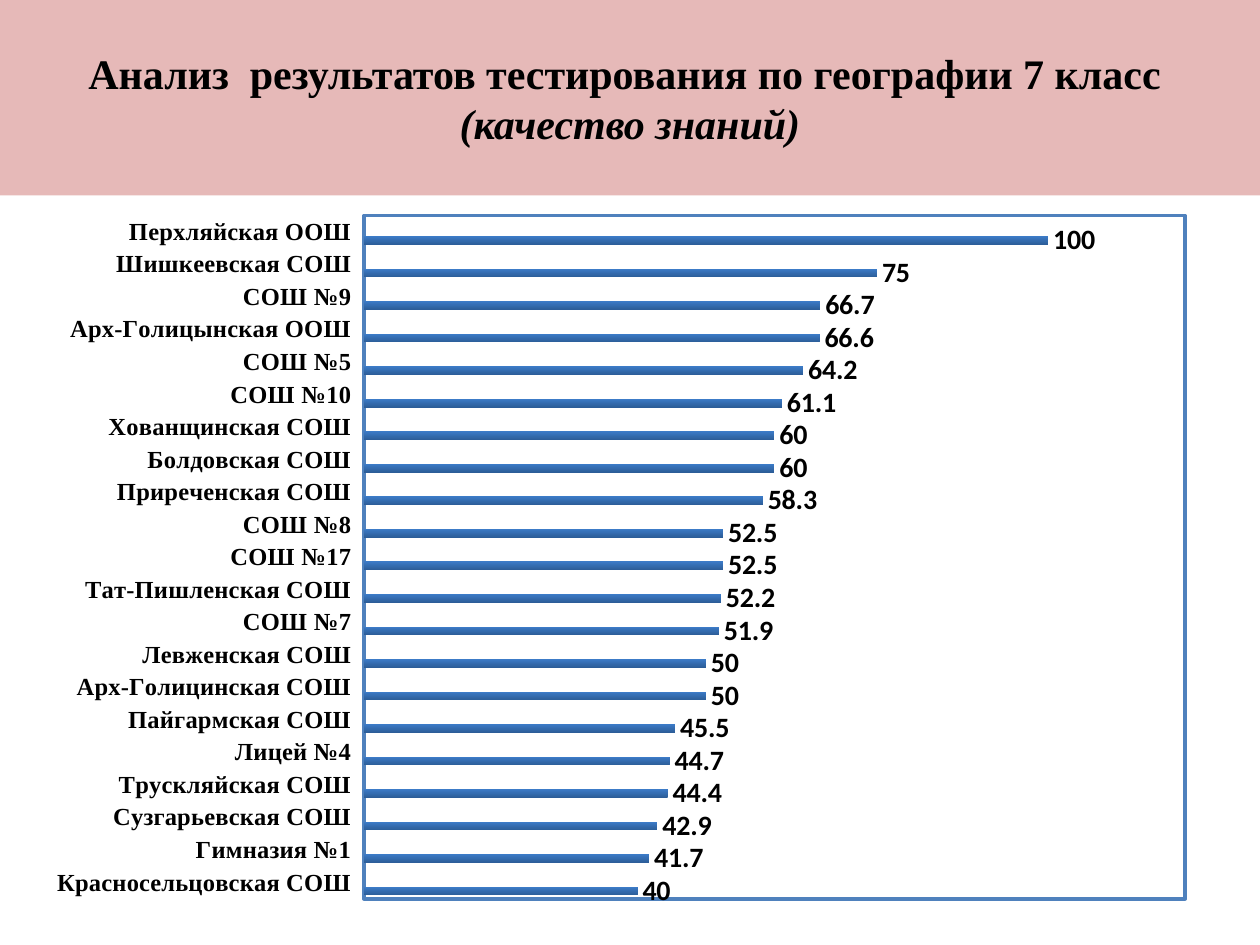
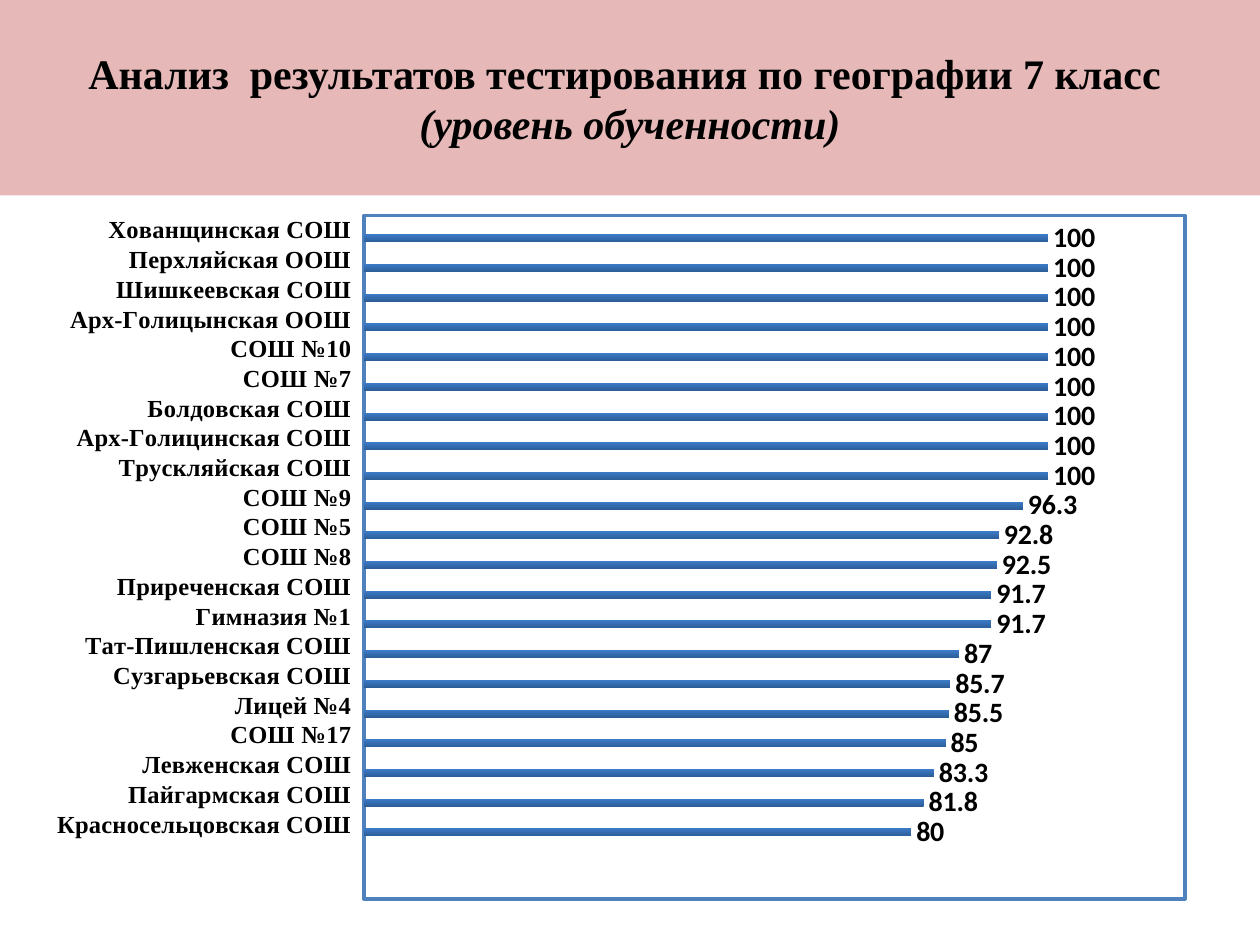
from dataclasses import dataclass

from lxml.etree import SubElement
from pptx import Presentation
from pptx.chart.data import CategoryChartData
from pptx.dml.color import RGBColor
from pptx.enum.chart import XL_CHART_TYPE, XL_LABEL_POSITION, XL_TICK_LABEL_POSITION, XL_TICK_MARK
from pptx.enum.shapes import MSO_SHAPE
from pptx.enum.text import MSO_ANCHOR, PP_ALIGN
from pptx.oxml import parse_xml
from pptx.oxml.ns import nsdecls, qn
from pptx.util import Pt


@dataclass(frozen=True)
class Theme:
    band: str = "E6B9B8"
    ink: str = "000000"
    paper: str = "FFFFFF"
    frame: str = "4F81BD"
    bar_dark: str = "2C5D98"
    bar_light: str = "3C7BC7"
    serif: str = "Times New Roman"
    sans: str = "Calibri"
    title_size: int = 24
    chart_size: int = 18
    value_size: int = 16
    school_size: int = 14


THEME = Theme()
HEADING = "Анализ  результатов тестирования по географии 7 класс "
PLOT_LAYOUT = {"x": 0.289, "y": 0.042, "w": 0.701, "h": 0.943}
AXIS_MAXIMUM = 120

KNOWLEDGE_QUALITY = [
    ("Красносельцовская СОШ", 40),
    ("Гимназия №1", 41.7),
    ("Сузгарьевская СОШ", 42.9),
    ("Трускляйская СОШ", 44.4),
    ("Лицей №4", 44.7),
    ("Пайгармская СОШ", 45.5),
    ("Арх-Голицинская СОШ", 50),
    ("Левженская СОШ", 50),
    ("СОШ №7", 51.9),
    ("Тат-Пишленская СОШ", 52.2),
    ("СОШ №17", 52.5),
    ("СОШ №8", 52.5),
    ("Приреченская СОШ", 58.3),
    ("Болдовская СОШ", 60),
    ("Хованщинская СОШ", 60),
    ("СОШ №10", 61.1),
    ("СОШ №5", 64.2),
    ("Арх-Голицынская ООШ", 66.6),
    ("СОШ №9", 66.7),
    ("Шишкеевская СОШ", 75),
    ("Перхляйская ООШ", 100),
]

TRAINING_LEVEL = [("", None)] * 2 + [
    ("Красносельцовская СОШ", 80),
    ("Пайгармская СОШ", 81.8),
    ("Левженская СОШ", 83.3),
    ("СОШ №17", 85),
    ("Лицей №4", 85.5),
    ("Сузгарьевская СОШ", 85.7),
    ("Тат-Пишленская СОШ", 87),
    ("Гимназия №1", 91.7),
    ("Приреченская СОШ", 91.7),
    ("СОШ №8", 92.5),
    ("СОШ №5", 92.8),
    ("СОШ №9", 96.3),
    ("Трускляйская СОШ", 100),
    ("Арх-Голицинская СОШ", 100),
    ("Болдовская СОШ", 100),
    ("СОШ №7", 100),
    ("СОШ №10", 100),
    ("Арх-Голицынская ООШ", 100),
    ("Шишкеевская СОШ", 100),
    ("Перхляйская ООШ", 100),
    ("Хованщинская СОШ", 100),
]


def rgb(code):
    return RGBColor.from_string(code)


def style_font(font, size, face=THEME.sans, bold=False, italic=False, color=THEME.ink):
    font.size = Pt(size)
    font.name = face
    font.bold = bold
    font.italic = italic
    font.color.rgb = rgb(color)


def write_text(paragraph, text, **font_format):
    run = paragraph.add_run()
    run.text = text
    style_font(run.font, **font_format)


def add_title_band(slide, measure):
    band = slide.shapes.add_shape(MSO_SHAPE.RECTANGLE, 0, 0, Pt(720), Pt(111.6))
    band.shadow.inherit = False
    band.fill.solid()
    band.fill.fore_color.rgb = rgb(THEME.band)
    band.line.fill.background()
    band.text_frame.word_wrap = True
    band.text_frame.vertical_anchor = MSO_ANCHOR.MIDDLE
    title = band.text_frame.paragraphs[0]
    title.alignment = PP_ALIGN.CENTER
    title_format = dict(size=THEME.title_size, face=THEME.serif, bold=True)
    write_text(title, HEADING, **title_format)
    title.add_line_break()
    write_text(title, measure, italic=True, **title_format)


def frame_plot_area(chart):
    plot_area = chart._chartSpace.chart.plotArea
    for old_layout in plot_area.findall(qn("c:layout")):
        plot_area.remove(old_layout)
    layout = parse_xml(f"<c:layout {nsdecls('c')}/>")
    manual = SubElement(layout, qn("c:manualLayout"))
    settings = {"layoutTarget": "inner", "xMode": "edge", "yMode": "edge", **PLOT_LAYOUT}
    for tag, value in settings.items():
        SubElement(manual, qn(f"c:{tag}")).set("val", str(value))
    plot_area.insert(0, layout)
    plot_area.append(parse_xml(
        f"<c:spPr {nsdecls('c', 'a')}>"
        f'<a:solidFill><a:srgbClr val="{THEME.paper}"/></a:solidFill>'
        f'<a:ln w="{Pt(2)}"><a:solidFill><a:srgbClr val="{THEME.frame}"/></a:solidFill></a:ln>'
        "</c:spPr>"
    ))


def style_axes(chart):
    schools = chart.category_axis
    schools.major_tick_mark = schools.minor_tick_mark = XL_TICK_MARK.NONE
    schools.tick_label_position = XL_TICK_LABEL_POSITION.LOW
    schools.has_major_gridlines = False
    schools.format.line.color.rgb = rgb(THEME.frame)
    style_font(schools.tick_labels.font, THEME.school_size, THEME.serif, bold=True)
    scores = chart.value_axis
    scores.minimum_scale = 0
    scores.maximum_scale = AXIS_MAXIMUM
    scores.has_major_gridlines = False
    scores.visible = False


def style_scores(series):
    fill = series.format.fill
    fill.gradient()
    fill.gradient_angle = 90
    for stop, color in zip(fill.gradient_stops, (THEME.bar_dark, THEME.bar_light)):
        stop.color.rgb = rgb(color)
    labels = series.data_labels
    labels.show_value = True
    labels.position = XL_LABEL_POSITION.OUTSIDE_END
    style_font(labels.font, THEME.value_size, bold=True)


def add_school_chart(slide, results):
    schools, scores = zip(*results)
    data = CategoryChartData()
    data.categories = schools
    data.add_series("Series 1", scores)
    for number in (2, 3):
        data.add_series(f"Series {number}", [None] * len(schools))
    chart = slide.shapes.add_chart(
        XL_CHART_TYPE.BAR_CLUSTERED, Pt(14.4), Pt(105.84), Pt(669.6), Pt(414), data
    ).chart
    chart.has_legend = False
    chart.has_title = False
    style_font(chart.font, THEME.chart_size)
    plot = chart.plots[0]
    plot.vary_by_categories = False
    plot.gap_width = 75
    plot.overlap = 0
    style_scores(plot.series[0])
    style_axes(chart)
    frame_plot_area(chart)


def main():
    deck = Presentation()
    deck.slide_width, deck.slide_height = Pt(720), Pt(540)
    for measure, results in (
        ("(качество знаний)", KNOWLEDGE_QUALITY),
        ("(уровень обученности)", TRAINING_LEVEL),
    ):
        slide = deck.slides.add_slide(deck.slide_layouts[6])
        add_title_band(slide, measure)
        add_school_chart(slide, results)
    deck.save("out.pptx")


if __name__ == "__main__":
    main()
